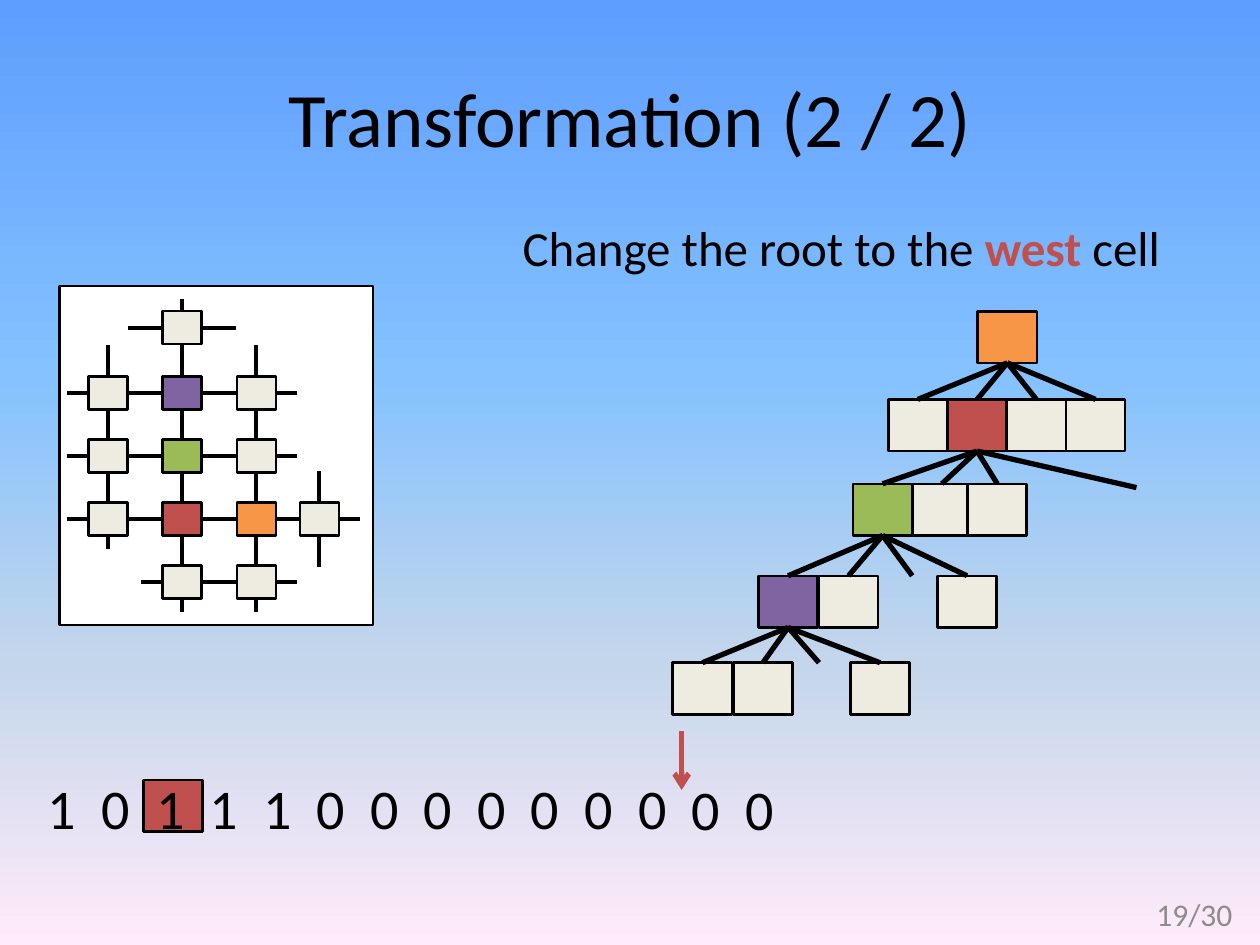
"""Build the slide that moves the root of a cell tree to the west cell."""
from lxml.etree import SubElement
from pptx import Presentation
from pptx.dml.color import RGBColor
from pptx.enum.shapes import MSO_CONNECTOR as Connector, MSO_SHAPE as Shape
from pptx.enum.text import MSO_ANCHOR as Anchor, PP_ALIGN as Align
from pptx.oxml.ns import qn
from pptx.util import Inches, Pt

THEME = {
    "font": "Calibri",
    "ink": "000000", "paper": "FFFFFF", "muted": "8C8C8C",
    "plain": "EEECE1", "red": "C0504D", "green": "9BBB59",
    "purple": "8064A2", "orange": "F79646",
    "sky": [(0, "5E9EFF"), (40, "85C2FF"), (70, "C4D6EB"), (100, "FFEBFA")],
    "title": 44, "digits": 32, "caption": 28, "footer": 18, "tracking": 3.6,
    "outline": 1.5, "map_line": 2.25, "tree_line": 3,
}
TOP, LEFT, BOTTOM, RIGHT = range(4)
DIRECTION = {TOP: (0, -1), LEFT: (-1, 0), BOTTOM: (0, 1), RIGHT: (1, 0)}
OPPOSITE = {TOP: BOTTOM, LEFT: RIGHT, BOTTOM: TOP, RIGHT: LEFT}

MAP_FRAME = (0.47, 2.27, 2.49, 2.69)
MAP_CELL = (0.31, 0.26)
MAP_COLUMNS = (0.7, 1.29, 1.88, 2.38)
MAP_ROWS = (2.47, 2.99, 3.49, 3.99, 4.49)
MAP_CELLS = [
    {1: "plain"},
    {0: "plain", 1: "purple", 2: "plain"},
    {0: "plain", 1: "green", 2: "plain"},
    {0: "plain", 1: "red", 2: "orange", 3: "plain"},
    {1: "plain", 2: "plain"},
]
STUB = {TOP: 0.25, LEFT: 0.17, BOTTOM: 0.11, RIGHT: 0.17}
LONG_STUB = {(0, 1, TOP): 0.1, (0, 1, LEFT): 0.27, (0, 1, RIGHT): 0.27,
             (3, 3, BOTTOM): 0.25}

TREE_CELL = (0.47, 0.41)
TREE_LEVELS = [
    {"top": 2.47, "cells": [(7.76, "orange")]},
    {"top": 3.17, "cells": [(7.05, "plain"), (7.52, "red"), (7.99, "plain"), (8.46, "plain")]},
    {"top": 3.84, "cells": [(6.77, "green"), (7.24, "plain"), (7.68, "plain")], "loose": (9.02, 3.87)},
    {"top": 4.57, "cells": [(6.02, "purple"), (6.5, "plain"), (7.44, "plain")], "loose": (7.24, 4.57)},
    {"top": 5.26, "cells": [(5.34, "plain"), (5.82, "plain"), (6.75, "plain")], "loose": (6.5, 5.26)},
]

DIGITS = [("0 0", (5.39, 6.1, 1.01, 0.64)),
          ("1 1 1 0 0 0 0 0 0 0", (1.14, 6.09, 4.35, 0.64)),
          ("1 0", (0.28, 6.09, 0.93, 0.64))]
CAPTION = [("Change the root to the ", "ink", False), ("west", "red", True),
           (" cell", "ink", False)]
HIGHLIGHT = (1.14, 6.19)
ARROW = ((5.41, 5.8), (5.41, 6.27))


def color(name):
    return RGBColor.from_string(THEME[name])


def add_text(shapes, content, place, size, ink="ink", align=Align.LEFT,
             anchor=Anchor.TOP, tracking=0):
    box = shapes.add_textbox(*map(Inches, place))
    frame = box.text_frame
    frame.word_wrap = True
    frame.vertical_anchor = anchor
    para = frame.paragraphs[0]
    para.alignment = align
    pieces = [(content, ink, False)] if isinstance(content, str) else content
    for words, shade, bold in pieces:
        span = para.add_run()
        span.text = words
        span.font.name = THEME["font"]
        span.font.size = Pt(THEME[size])
        span.font.bold = bold
        span.font.color.rgb = color(shade)
        if tracking:
            span.font._element.set("spc", str(round(tracking * 100)))


def add_cell(shapes, place, fill):
    cell = shapes.add_shape(Shape.RECTANGLE, *map(Inches, place))
    cell.shadow.inherit = False
    cell.fill.solid()
    cell.fill.fore_color.rgb = color(fill)
    cell.line.color.rgb = color("ink")
    cell.line.width = Pt(THEME["outline"])
    return cell


def side_point(cell, side):
    across, down = DIRECTION[side]
    return (cell.left + cell.width * (1 + across) / 2,
            cell.top + cell.height * (1 + down) / 2)


def add_line(shapes, start, end, width, ink="ink"):
    points = [round(value) for value in (*start, *end)]
    line = shapes.add_connector(Connector.STRAIGHT, *points)
    line.line.color.rgb = color(ink)
    line.line.width = Pt(THEME[width])
    SubElement(line._element.spPr, qn("a:effectLst"))
    return line


def join(shapes, cell, side, width, other=None, end=None):
    if other is not None:
        end = side_point(other, OPPOSITE[side])
    line = add_line(shapes, side_point(cell, side), end, width)
    line.begin_connect(cell, side)
    if other is not None:
        line.end_connect(other, OPPOSITE[side])


def paint_background(slide):
    fill = slide.background.fill
    fill.gradient()
    fill.gradient_angle = 270
    stops = slide.element.find(".//" + qn("a:gsLst"))
    stops.clear()
    for percent, shade in THEME["sky"]:
        stop = SubElement(stops, qn("a:gs"), pos=str(percent * 1000))
        SubElement(stop, qn("a:srgbClr"), val=shade)


def draw_map(slide):
    shapes = slide.shapes.add_group_shape().shapes
    add_cell(shapes, MAP_FRAME, "paper")
    cells = {(row, column): add_cell(shapes, (MAP_COLUMNS[column], MAP_ROWS[row], *MAP_CELL), fill)
             for row, line in enumerate(MAP_CELLS) for column, fill in line.items()}
    for (row, column), cell in cells.items():
        for side, (across, down) in DIRECTION.items():
            neighbour = cells.get((row + down, column + across))
            if neighbour is None:
                length = Inches(LONG_STUB.get((row, column, side), STUB[side]))
                x, y = side_point(cell, side)
                join(shapes, cell, side, "map_line", end=(x + across * length, y + down * length))
            elif side in (RIGHT, BOTTOM):
                join(shapes, cell, side, "map_line", neighbour)


def draw_tree(slide):
    shapes = slide.shapes.add_group_shape().shapes
    parent = None
    for level in TREE_LEVELS:
        cells = [(add_cell(shapes, (left, level["top"], *TREE_CELL), fill), fill)
                 for left, fill in level["cells"]]
        if parent is not None:
            for cell, _ in cells:
                join(shapes, parent, BOTTOM, "tree_line", cell)
            if "loose" in level:
                join(shapes, parent, BOTTOM, "tree_line", end=map(Inches, level["loose"]))
        parent = next((cell for cell, fill in cells if fill != "plain"), None)


def main():
    deck = Presentation()
    deck.slide_width, deck.slide_height = Inches(10), Inches(7.5)
    slide = deck.slides.add_slide(deck.slide_layouts[6])
    shapes = slide.shapes
    paint_background(slide)
    add_cell(shapes, (*HIGHLIGHT, *TREE_CELL), "red")
    add_text(shapes, "Transformation (2 / 2)", (0.5, 0.3, 9, 1.25), "title",
             align=Align.CENTER, anchor=Anchor.MIDDLE)
    draw_map(slide)
    arrow = add_line(shapes, *(map(Inches, point) for point in ARROW), "tree_line", "red")
    SubElement(arrow.line._get_or_add_ln(), qn("a:tailEnd"), type="arrow")
    for digits, place in DIGITS:
        add_text(shapes, digits, place, "digits", tracking=THEME["tracking"])
    add_text(shapes, CAPTION, (4.05, 1.68, 5.52, 0.57), "caption")
    draw_tree(slide)
    add_text(shapes, "19/30", (7.55, 7.05, 2.33, 0.4), "footer", ink="muted",
             align=Align.RIGHT, anchor=Anchor.MIDDLE)
    deck.save("out.pptx")


if __name__ == "__main__":
    main()
